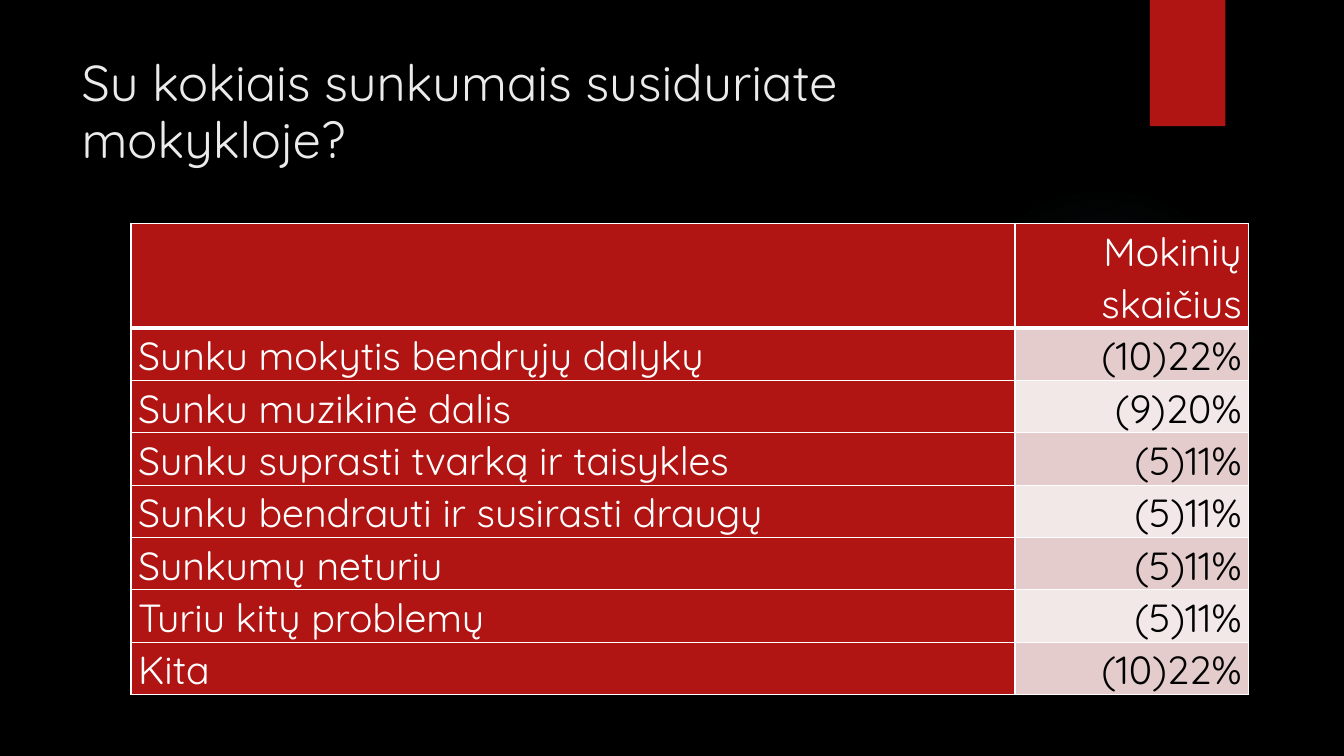
from lxml import etree
from pptx import Presentation
from pptx.dml.color import RGBColor
from pptx.enum.shapes import MSO_SHAPE
from pptx.enum.text import MSO_ANCHOR, PP_ALIGN
from pptx.oxml import parse_xml
from pptx.oxml.ns import nsdecls, qn
from pptx.util import Cm, Pt

FONT = "Quicksand"
RED = "B01513"
WHITE = "FFFFFF"


def paint(target, color):
    """Give a fill one solid colour."""
    target.solid()
    target.fore_color.rgb = RGBColor.from_string(color)


def add_border(cell, side, points):
    """Draw a white line on one side (L, R, T or B) of a cell."""
    line = etree.SubElement(cell._tc.get_or_add_tcPr(), qn(f"a:ln{side}"), w=str(Pt(points)))
    solid = etree.SubElement(line, qn("a:solidFill"))
    etree.SubElement(solid, qn("a:srgbClr"), val=WHITE)


deck = Presentation()
deck.slide_width, deck.slide_height = Cm(33.87), Cm(19.05)
page = deck.slides.add_slide(deck.slide_layouts[5])
paint(page.background.fill, "000000")

# Decoration: faint glow and red ribbon
glow = page.shapes.add_shape(MSO_SHAPE.OVAL, Cm(23.9), Cm(4.65), Cm(7.82), Cm(7.82))
ribbon = page.shapes.add_shape(MSO_SHAPE.RECTANGLE, Cm(28.98), Cm(0), Cm(1.9), Cm(3.18))
for shape in (glow, ribbon):
    shape.shadow.inherit = False
    shape.line.fill.background()
paint(ribbon.fill, RED)
stops = "".join(
    f'<a:gs pos="{position}000"><a:srgbClr val="50B9C1"><a:alpha val="{alpha}000"/></a:srgbClr></a:gs>'
    for position, alpha in ((0, 7), (36, 6), (69, 0))
)
glow._element.spPr.find(qn("a:prstGeom")).addnext(parse_xml(
    f'<a:gradFill {nsdecls("a")}><a:gsLst>{stops}</a:gsLst><a:path path="circle">'
    '<a:fillToRect l="50000" t="50000" r="50000" b="50000"/></a:path></a:gradFill>'
))

# Title
title = page.shapes.title
title.left, title.top, title.width, title.height = Cm(1.8), Cm(1.27), Cm(26.14), Cm(3.89)
title.text_frame.text = "Su kokiais sunkumais susiduriate mokykloje?"
title.text_frame.vertical_anchor = MSO_ANCHOR.TOP
heading = title.text_frame.paragraphs[0]
heading.alignment = PP_ALIGN.LEFT
heading.line_spacing = 0.95
heading.font.name = FONT
heading.font.size = Pt(36)
heading.font.color.rgb = RGBColor.from_string("EBEBEB")

# Table of difficulties
rows = [
    ("", "Mokinių skaičius"),
    ("Sunku mokytis bendrųjų dalykų", "(10)22%"),
    ("Sunku muzikinė dalis", "(9)20%"),
    ("Sunku suprasti tvarką ir taisykles", "(5)11%"),
    ("Sunku bendrauti ir susirasti draugų", "(5)11%"),
    ("Sunkumų neturiu", "(5)11%"),
    ("Turiu kitų problemų", "(5)11%"),
    ("Kita", "(10)22%"),
]
table = page.shapes.add_table(len(rows), 2, Cm(3.3), Cm(5.63), Cm(28.17), Cm(10.67)).table
table.columns[0].width, table.columns[1].width = Cm(22.28), Cm(5.89)
for row_number, row in enumerate(rows):
    table.rows[row_number].height = Cm(1.19) if row_number else Cm(2.34)
    for column_number, text in enumerate(row):
        cell = table.cell(row_number, column_number)
        is_value = row_number > 0 and column_number == 1
        cell.vertical_anchor = MSO_ANCHOR.BOTTOM
        cell.margin_left = cell.margin_right = Cm(0.18)
        cell.margin_top = cell.margin_bottom = Cm(0)
        cell.text = text
        paragraph = cell.text_frame.paragraphs[0]
        paragraph.alignment = PP_ALIGN.RIGHT if column_number else PP_ALIGN.LEFT
        paragraph.line_spacing = 1.07
        paragraph.space_after = Pt(8)
        paragraph.font.name = FONT
        paragraph.font.size = Pt(28)
        paragraph.font.bold = False
        paragraph.font.color.rgb = RGBColor.from_string("000000" if is_value else WHITE)
        add_border(cell, "L", 1)
        add_border(cell, "R", 1)
        add_border(cell, "T", 3 if row_number == 1 else 1)
        add_border(cell, "B", 3 if row_number == 0 else 1)
        band = "E4CCCC" if row_number % 2 else "F2E8E7"
        paint(cell.fill, band if is_value else RED)

deck.save("out.pptx")
